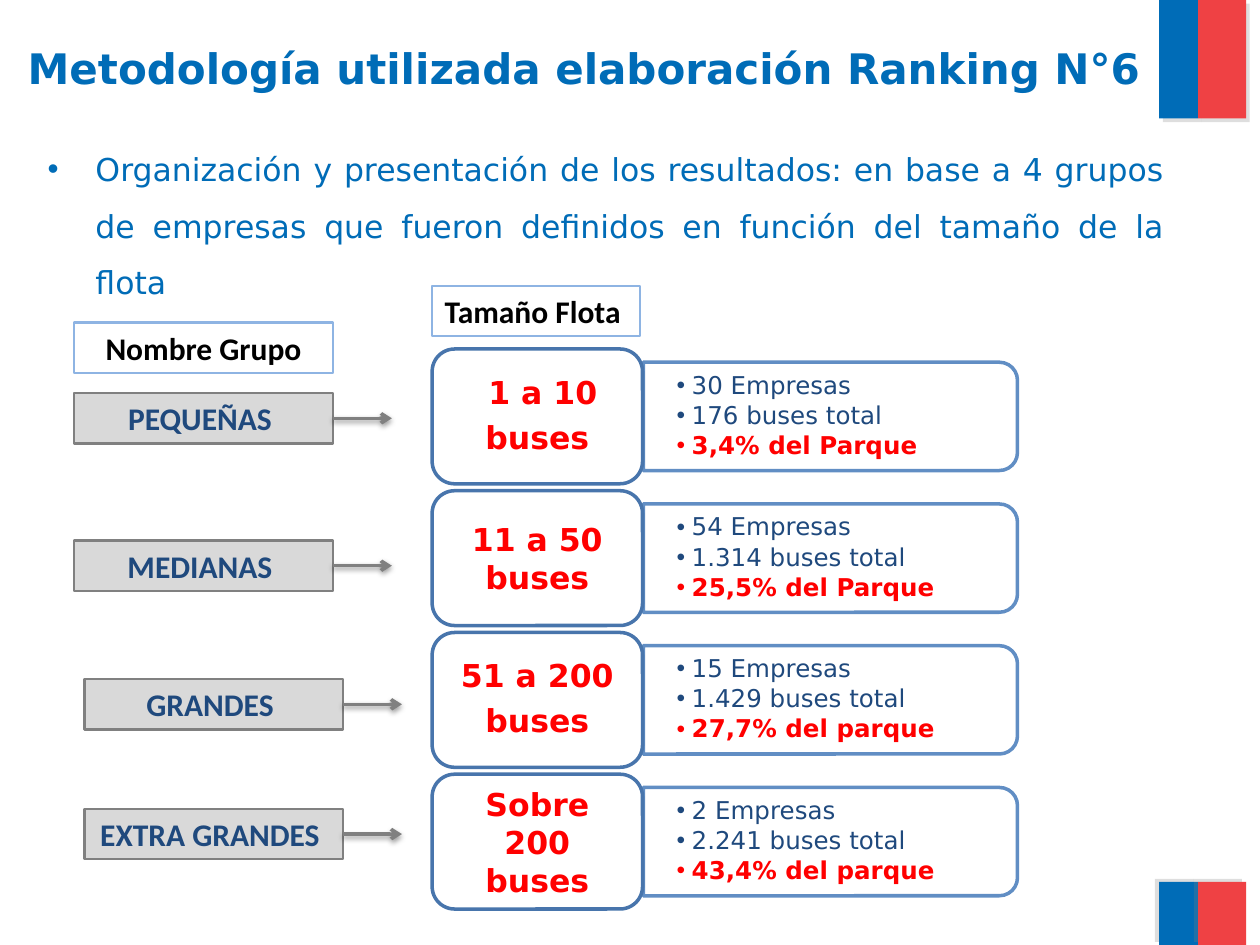
from lxml import etree
from pptx import Presentation
from pptx.dml.color import RGBColor
from pptx.enum.shapes import MSO_CONNECTOR, MSO_SHAPE
from pptx.enum.text import MSO_ANCHOR, MSO_AUTO_SIZE, PP_ALIGN
from pptx.oxml.ns import qn
from pptx.util import Inches, Pt

RECT = MSO_SHAPE.RECTANGLE
ROUNDED = MSO_SHAPE.ROUNDED_RECTANGLE
TWO_ROUNDED = MSO_SHAPE.ROUND_2_SAME_RECTANGLE
STRAIGHT = MSO_CONNECTOR.STRAIGHT
MIDDLE, TOP = MSO_ANCHOR.MIDDLE, MSO_ANCHOR.TOP
CENTER, LEFT, JUSTIFY = PP_ALIGN.CENTER, PP_ALIGN.LEFT, PP_ALIGN.JUSTIFY
RIGHT_SIDE = 3

COLORS = {name: RGBColor.from_string(value) for name, value in {
    "blue": "006CB7", "red": "EF4144", "white": "FFFFFF", "black": "000000",
    "navy": "1F497D", "accent": "FF0000", "gray": "808080", "light": "D9D9D9",
    "header": "8EB4E3", "card": "4875AC", "detail": "618EC4",
}.items()}
SANS, CALIBRI = "DejaVu Sans", "Calibri"


def add_run(paragraph, text, size, font, color, bold=False):
    run = paragraph.add_run()
    run.text = text
    run.font.size = Pt(size)
    run.font.name = font
    run.font.bold = bold
    run.font.color.rgb = COLORS[color]


def add_effect(item, color, alpha, blur, distance, angle):
    properties = item._element.spPr
    effects = properties.find(qn("a:effectLst"))
    if effects is None:
        effects = etree.SubElement(properties, qn("a:effectLst"))
    shadow = etree.SubElement(effects, qn("a:outerShdw"), blurRad=str(Pt(blur)),
                              dist=str(Pt(distance)), dir=str(angle * 60000))
    tint = etree.SubElement(shadow, qn("a:srgbClr"), val=str(COLORS[color]))
    etree.SubElement(tint, qn("a:alpha"), val=str(alpha * 1000))


prs = Presentation()
prs.slide_width, prs.slide_height = Inches(10), Inches(7.5)
slide = prs.slides.add_slide(prs.slide_layouts[5])
shapes = slide.shapes

for top, height, angle in [(0, 0.94, 45), (7, 0.5, 215)]:
    for left, width, color in [(9.2, 0.31, "blue"), (9.51, 0.38, "red")]:
        band = shapes.add_shape(RECT, Inches(left), Inches(top), Inches(width), Inches(height))
        band.shadow.inherit = False
        band.fill.solid()
        band.fill.fore_color.rgb = COLORS[color]
        band.line.fill.background()
        add_effect(band, "gray", 25, 0, 3, angle)

title = shapes.title
title.left, title.top, title.width, title.height = Inches(0.12), Inches(0.29), Inches(9.21), Inches(0.63)
title.text_frame.vertical_anchor = TOP
title.text_frame.auto_size = MSO_AUTO_SIZE.NONE
title.text_frame.paragraphs[0].alignment = LEFT
add_run(title.text_frame.paragraphs[0], "Metodología utilizada elaboración Ranking N°6", 24, SANS, "blue", True)

intro = shapes.add_textbox(Inches(0.28), Inches(0.99), Inches(9.06), Inches(1.46)).text_frame
intro.word_wrap = True
intro_line = intro.paragraphs[0]
intro_line.alignment = JUSTIFY
intro_line.line_spacing = 1.5
add_run(intro_line, "Organización y presentación de los resultados: en base a 4 grupos de empresas "
        "que fueron definidos en función del tamaño de la flota", 18, SANS, "blue")
bulleted = [(intro_line, 0.38)]

FIRST_TOP, PITCH, CARD_HEIGHT = 2.77, 1.125, 1.07
fleets = [
    ([" 1 a 10", "buses"], 0.9, 6.3, ["30 Empresas", "176 buses total", "3,4% del Parque"]),
    (["11 a 50", "buses"], 1, 0, ["54 Empresas", "1.314 buses total", "25,5% del Parque"]),
    (["51 a 200", "buses"], 0.9, 6.3, ["15 Empresas", "1.429 buses total", "27,7% del parque"]),
    (["Sobre 200 buses"], 1, 0, ["2 Empresas", "2.241 buses total", "43,4% del parque"]),
]
for row, (size_lines, spacing, gap, facts) in enumerate(fleets):
    top = FIRST_TOP + row * PITCH
    middle = top + CARD_HEIGHT / 2

    detail = shapes.add_shape(TWO_ROUNDED, Inches(6.16), Inches(middle - 2.97 / 2), Inches(0.86), Inches(2.97))
    detail.rotation = 90
    card = shapes.add_shape(ROUNDED, Inches(3.43), Inches(top), Inches(1.67), Inches(CARD_HEIGHT))
    for panel, color in [(detail, "detail"), (card, "card")]:
        panel.shadow.inherit = False
        panel.fill.solid()
        panel.fill.fore_color.rgb = COLORS["white"]
        panel.line.color.rgb = COLORS[color]
        panel.line.width = Pt(2)

    fact_list = shapes.add_textbox(Inches(5.1), Inches(middle - 0.385), Inches(2.93), Inches(0.77)).text_frame
    for frame, side, edge in [(fact_list, 0.27, 0.14), (card.text_frame, 0.07, 0.04)]:
        frame.word_wrap = True
        frame.vertical_anchor = MIDDLE
        frame.margin_left = frame.margin_right = Inches(side)
        frame.margin_top = frame.margin_bottom = Inches(edge)

    for index, fact in enumerate(facts):
        line = fact_list.add_paragraph() if index else fact_list.paragraphs[0]
        line.line_spacing = 0.9
        line.space_after = Pt(2.1)
        is_share = index == len(facts) - 1
        add_run(line, fact, 14, SANS, "accent" if is_share else "navy", is_share)
        bulleted.append((line, 0.12))

    for index, text in enumerate(size_lines):
        line = card.text_frame.add_paragraph() if index else card.text_frame.paragraphs[0]
        line.alignment = CENTER
        line.line_spacing = spacing
        line.space_after = Pt(gap)
        add_run(line, text, 18, SANS, "accent", True)

for line, indent in bulleted:
    layout = line._p.get_or_add_pPr()
    layout.set("marL", str(Inches(indent)))
    layout.set("indent", str(-Inches(indent)))
    etree.SubElement(layout, qn("a:buFont"), typeface="Arial")
    etree.SubElement(layout, qn("a:buChar"), char="•")

labels = [
    ("PEQUEÑAS ", 0.59, 3.12, 2.05, True),
    ("MEDIANAS ", 0.59, 4.29, 2.05, True),
    ("GRANDES ", 0.67, 5.39, 2.05, True),
    ("EXTRA GRANDES ", 0.67, 6.42, 2.05, True),
    ("Nombre Grupo", 0.59, 2.56, 2.05, False),
    ("Tamaño Flota", 3.43, 2.27, 1.65, False),
]
for text, left, top, width, is_group in labels:
    label = shapes.add_shape(RECT, Inches(left), Inches(top), Inches(width), Inches(0.4))
    label.shadow.inherit = False
    label.line.color.rgb = COLORS["gray" if is_group else "header"]
    label.line.width = Pt(1.25)
    label.text_frame.word_wrap = True
    label.text_frame.vertical_anchor = MIDDLE
    line = label.text_frame.paragraphs[0]
    line.alignment = LEFT if text == "Tamaño Flota" else CENTER
    add_run(line, text, 18, CALIBRI, "navy" if is_group else "black", True)
    if not is_group:
        label.fill.background()
        continue
    label.fill.solid()
    label.fill.fore_color.rgb = COLORS["light"]

    right, middle = left + width, top + 0.2
    arrow = shapes.add_connector(STRAIGHT, Inches(right), Inches(middle), Inches(right + 0.47), Inches(middle))
    arrow.begin_connect(label, RIGHT_SIDE)
    arrow.line.color.rgb = COLORS["gray"]
    arrow.line.width = Pt(2)
    etree.SubElement(arrow.line._get_or_add_ln(), qn("a:tailEnd"), type="arrow")
    add_effect(arrow, "black", 38, 3.1, 1.6, 90)

prs.save("out.pptx")
